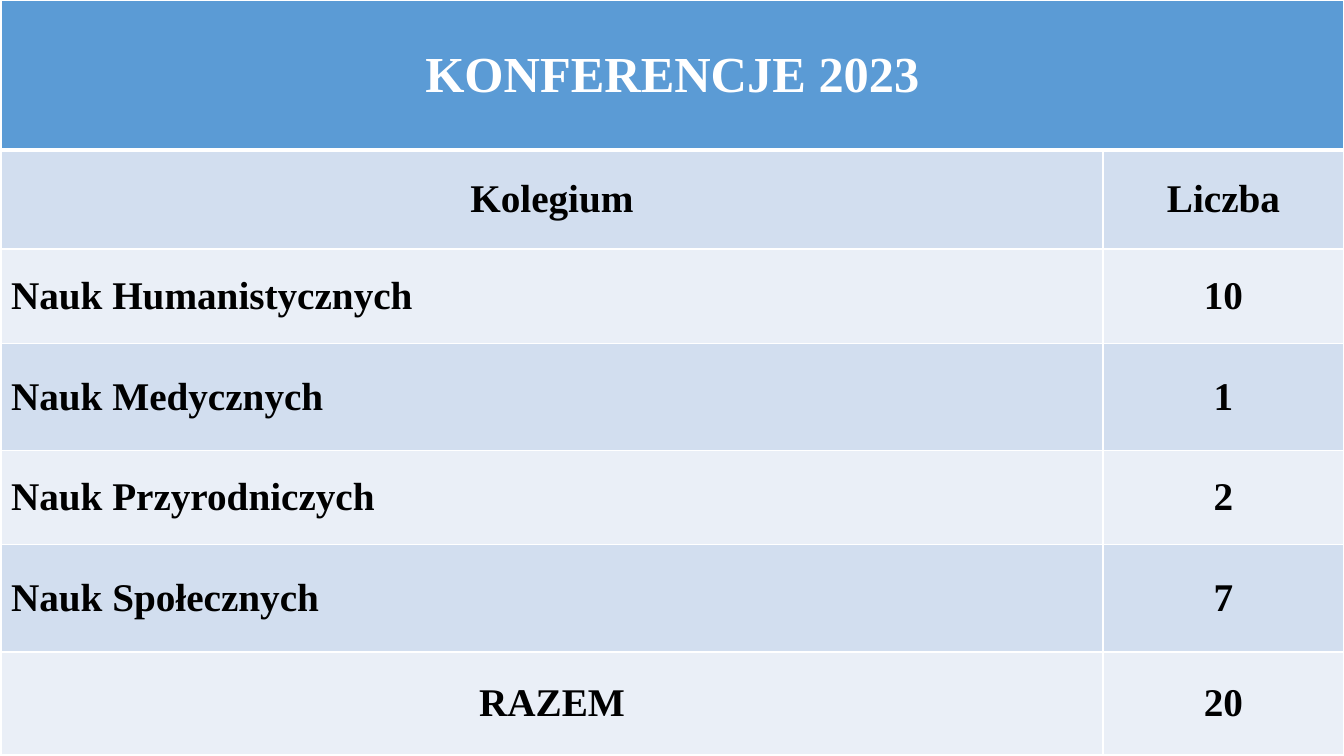
from dataclasses import dataclass

from lxml.etree import SubElement
from pptx import Presentation
from pptx.dml.color import RGBColor
from pptx.enum.text import MSO_ANCHOR, PP_ALIGN
from pptx.oxml.ns import qn
from pptx.util import Inches, Pt


@dataclass(frozen=True)
class Theme:
    """Colours, font and sizes of the slide."""
    font: str = "Times New Roman"
    header: str = "5B9BD5"
    bands: tuple = ("EAEFF7", "D2DEEF")
    white: str = "FFFFFF"
    black: str = "000000"
    title_size: int = 36
    body_size: int = 28
    thin: int = 1
    thick: int = 3


THEME = Theme()
TITLE = "KONFERENCJE 2023"
ROWS = [
    ("Kolegium", "Liczba"),
    ("Nauk Humanistycznych", "10"),
    ("Nauk Medycznych", "1"),
    ("Nauk Przyrodniczych", "2"),
    ("Nauk Społecznych", "7"),
    ("RAZEM", "20"),
]
COL_WIDTHS = (10.93, 2.39)
ROW_HEIGHTS = (1.49, 0.98, 0.94, 1.06, 0.93, 1.07, 1.02)


def set_borders(cell, top, bottom):
    """Draw white borders, with the given top and bottom widths in points."""
    tc_pr = cell._tc.get_or_add_tcPr()
    widths = {"L": THEME.thin, "R": THEME.thin, "T": top, "B": bottom}
    for side, width in widths.items():
        ln = SubElement(tc_pr, qn(f"a:ln{side}"), w=str(Pt(width)))
        fill = SubElement(ln, qn("a:solidFill"))
        SubElement(fill, qn("a:srgbClr"), val=THEME.white)


def style_cell(cell, fill, color, size, align):
    """Fill a cell and format its text."""
    cell.fill.solid()
    cell.fill.fore_color.rgb = RGBColor.from_string(fill)
    cell.vertical_anchor = MSO_ANCHOR.MIDDLE
    for p in cell.text_frame.paragraphs:
        p.alignment = align
        for r in p.runs:
            r.font.name = THEME.font
            r.font.size = Pt(size)
            r.font.bold = True
            r.font.color.rgb = RGBColor.from_string(color)


def add_header(table):
    """Merge the first row into the heading."""
    first, last = table.cell(0, 0), table.cell(0, 1)
    first.merge(last)
    first.text = TITLE
    for cell in (first, last):
        set_borders(cell, THEME.thin, THEME.thick)
        style_cell(cell, THEME.header, THEME.white, THEME.title_size, PP_ALIGN.CENTER)


def add_body(table):
    """Write the banded rows; college names are left-aligned."""
    for i, row in enumerate(ROWS, start=1):
        for j, text in enumerate(row):
            cell = table.cell(i, j)
            cell.text = text
            is_name = j == 0 and 1 < i < len(ROWS)
            align = PP_ALIGN.LEFT if is_name else PP_ALIGN.CENTER
            set_borders(cell, THEME.thick if i == 1 else THEME.thin, THEME.thin)
            style_cell(cell, THEME.bands[i % 2], THEME.black, THEME.body_size, align)


def add_conference_table(s):
    """Add the table that covers the slide."""
    table = s.shapes.add_table(
        len(ROW_HEIGHTS), len(COL_WIDTHS), Inches(0.01), Inches(0),
        Inches(sum(COL_WIDTHS)), Inches(sum(ROW_HEIGHTS))).table
    for column, width in zip(table.columns, COL_WIDTHS):
        column.width = Inches(width)
    for row, height in zip(table.rows, ROW_HEIGHTS):
        row.height = Inches(height)
    add_header(table)
    add_body(table)


def main():
    """Build and save the slide."""
    prs = Presentation()
    prs.slide_width, prs.slide_height = Inches(13.33), Inches(7.5)
    s = prs.slides.add_slide(prs.slide_layouts.get_by_name("Blank"))
    add_conference_table(s)
    prs.save("out.pptx")


if __name__ == "__main__":
    main()
